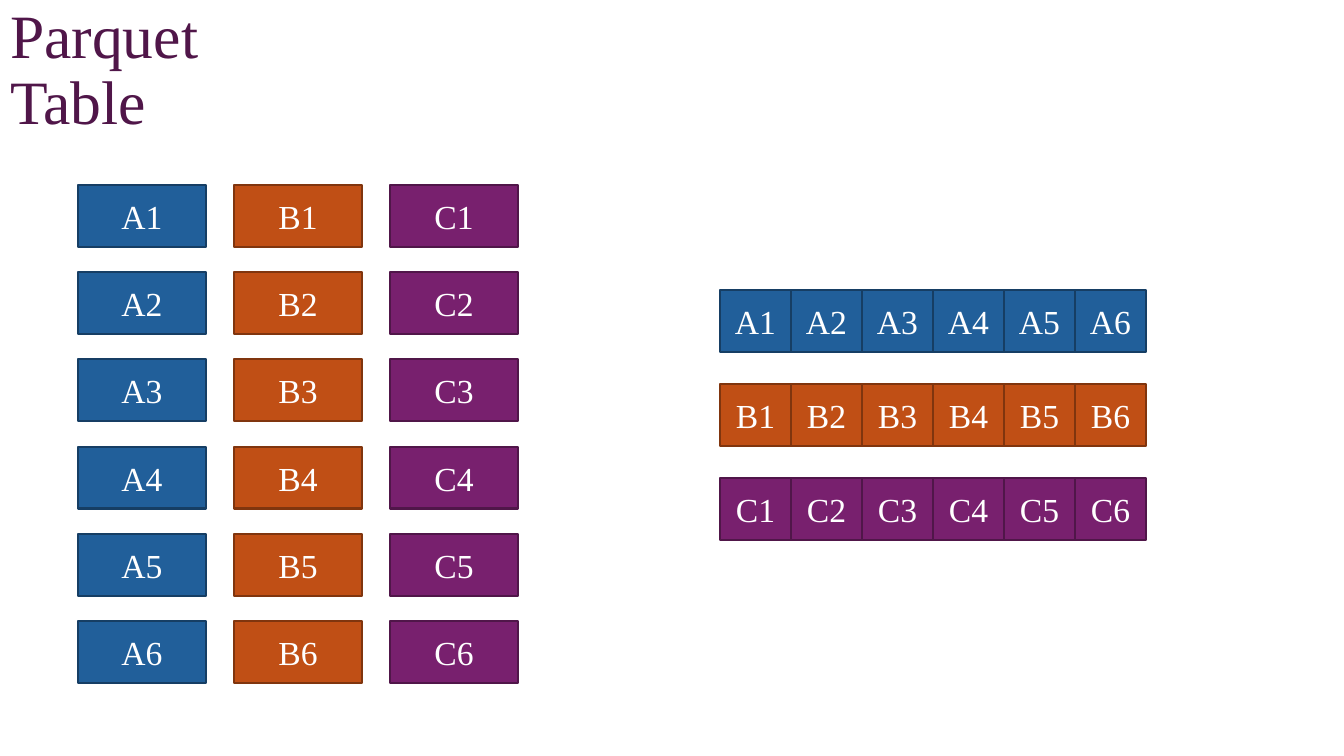
import pptx
import pptx.dml.color
import pptx.enum.shapes
import pptx.enum.text
import pptx.util

RGB = pptx.dml.color.RGBColor
ALIGN = pptx.enum.text.PP_ALIGN
ANCHOR = pptx.enum.text.MSO_ANCHOR
RECT = pptx.enum.shapes.MSO_SHAPE.RECTANGLE

PX = 914400 / 100.8
FACE = "Times New Roman"
WHITE = RGB(0xFF, 0xFF, 0xFF)
BLUE = RGB(0x21, 0x5F, 0x9A)
NAVY = RGB(0x16, 0x3E, 0x64)
RUST = RGB(0xC0, 0x4F, 0x15)
BROWN = RGB(0x80, 0x35, 0x0E)
PURPLE = RGB(0x78, 0x20, 0x6E)
PLUM = RGB(0x50, 0x16, 0x49)

FIELDS = {"A": (BLUE, NAVY), "B": (RUST, BROWN), "C": (PURPLE, PLUM)}
ROWS = range(1, 7)


def emu(px):
    return round(px * PX)


def apply(target, **values):
    for name, value in values.items():
        setattr(target, name, value)


def style(para, size, color, align):
    apply(para, alignment=align)
    apply(para.font, name=FACE, size=pptx.util.Pt(size), bold=False)
    para.font.color.rgb = color


def add_title(slide, box, text):
    left, top, width, height = map(emu, box)
    title = slide.shapes.title
    apply(title, left=left, top=top, width=width, height=height)
    frame = title.text_frame
    apply(frame, text=text, word_wrap=True, vertical_anchor=ANCHOR.TOP,
          auto_size=pptx.enum.text.MSO_AUTO_SIZE.NONE)
    para = frame.paragraphs[0]
    style(para, 44, PLUM, ALIGN.LEFT)
    para.line_spacing = 0.9


def add_cell(slide, box, field, row):
    cell = slide.shapes.add_shape(RECT, *map(emu, box))
    cell.shadow.inherit = False
    fill, edge = FIELDS[field]
    cell.fill.solid()
    cell.fill.fore_color.rgb = fill
    cell.line.color.rgb = edge
    cell.line.width = pptx.util.Pt(1.5)
    frame = cell.text_frame
    apply(frame, text=f"{field}{row}", word_wrap=True,
          vertical_anchor=ANCHOR.MIDDLE)
    style(frame.paragraphs[0], 24, WHITE, ALIGN.CENTER)


def add_grid(slide, box, size, lines):
    """Spread lines of (field, row) cells of one size evenly over the box."""
    left, top, width, height = box
    wide, high = size
    step_x = (width - wide) / (len(lines[0]) - 1)
    step_y = (height - high) / (len(lines) - 1)
    for j, line in enumerate(lines):
        for i, (field, row) in enumerate(line):
            spot = (left + i * step_x, top + j * step_y, wide, high)
            add_cell(slide, spot, field, row)


def main():
    deck = pptx.Presentation()
    apply(deck, slide_width=emu(1344), slide_height=emu(756))
    slide = deck.slides.add_slide(deck.slide_layouts[5])
    add_title(slide, (0, 0, 302, 141), "Parquet Table")
    by_row = [[(field, row) for field in FIELDS] for row in ROWS]
    by_field = [[(field, row) for row in ROWS] for field in FIELDS]
    add_grid(slide, (78, 185, 440, 498), (128, 62), by_row)
    add_grid(slide, (720, 290, 426, 250), (71, 62), by_field)
    deck.save("out.pptx")


if __name__ == "__main__":
    main()
